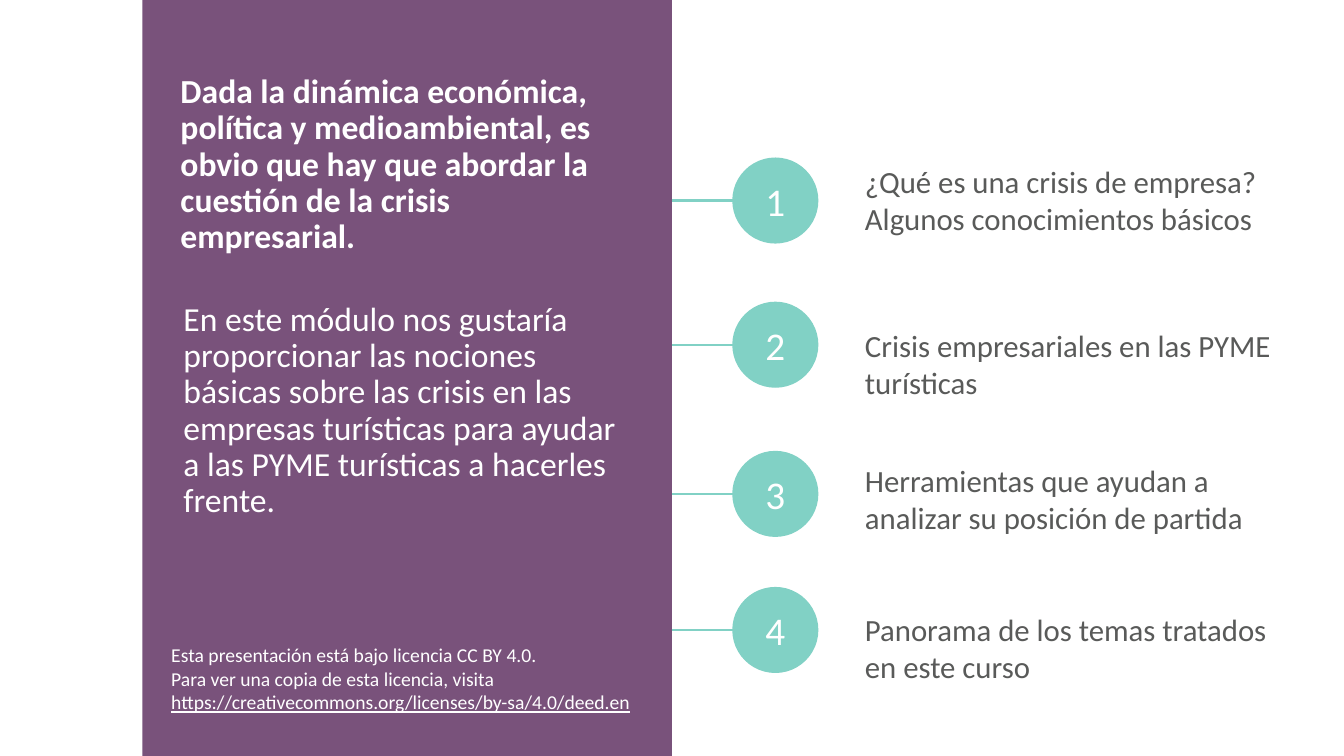
"""Build the module overview slide with a panel and four numbered topics."""
from dataclasses import dataclass

from lxml import etree
from pptx import Presentation
from pptx import util as u
from pptx.dml.color import RGBColor
from pptx.enum import shapes, text
from pptx.oxml.ns import qn

HEADING = [["Dada la dinámica económica, política y medioambiental, es obvio que "
            "hay que abordar la cuestión de la crisis empresarial."]]
SUMMARY = [["En este módulo nos gustaría proporcionar las nociones básicas sobre las "
            "crisis en las empresas turísticas para ayudar a las PYME turísticas a "
            "hacerles frente."]]
LICENCE = [["Esta presentación está bajo licencia CC BY 4.0."],
           ["Para ver una copia de esta licencia, visita ",
            "https://creativecommons.org/licenses/by-sa/4.0/deed.en"]]
TOPICS = [
    (20.93, 20.93, [["¿Qué es una crisis de empresa?"], ["Algunos conocimientos básicos"]]),
    (40, 42.53, [["Crisis empresariales en las PYME turísticas"]]),
    (59.73, 60.4, [["Herramientas que ayudan a analizar su posición de partida"]]),
    (77.73, 80.13, [["Panorama de los temas tratados en este curso"]]),
]

PANEL = (10.6, 0, 39.4, 100)
HEADING_AREA = (12.68, 9.2, 34.88, 26)
SUMMARY_AREA = (12.9, 39.33, 34.28, 40)
LICENCE_AREA = (12, 84.4, 38.18, 10.8)
BADGE_LEFT, BADGE_HEIGHT = 54.54, 11.2
TOPIC_LEFT, TOPIC_WIDTH, TOPIC_HEIGHT = 63.62, 32.63, 11.2


@dataclass(frozen=True)
class Theme:
    font: str = "Calibri"
    purple: str = "79527B"
    mint: str = "81D1C5"
    white: str = "FFFFFF"
    grey: str = "595A59"
    lead: int = 24
    topic: int = 22
    number: int = 28
    small: int = 14
    outline: float = 1
    link: float = 1.5


THEME = Theme()
deck = Presentation()
deck.slide_width, deck.slide_height = u.Inches(13.33), u.Inches(7.5)
page = deck.slides.add_slide(deck.slide_layouts[1])


def across(share):
    return round(deck.slide_width * share / 100)


def down(share):
    return round(deck.slide_height * share / 100)


def area(left, top, width, height):
    return across(left), down(top), across(width), down(height)


def write(box, lines, size, color, bold=False, spacing=1.0,
          align=text.PP_ALIGN.LEFT, anchor=text.MSO_ANCHOR.TOP):
    frame = box.text_frame
    frame.word_wrap = True
    frame.auto_size = text.MSO_AUTO_SIZE.NONE
    frame.vertical_anchor = anchor
    for index, runs in enumerate(lines):
        para = frame.add_paragraph() if index else frame.paragraphs[0]
        para.alignment, para.line_spacing = align, spacing
        para.space_before = u.Pt(0)
        for words in runs:
            span = para.add_run()
            span.text = words
            span.font.name, span.font.size = THEME.font, u.Pt(size)
            span.font.bold = bold
            span.font.underline = words.startswith("https:")
            span.font.color.rgb = RGBColor.from_string(color)


def fill_placeholder(box, place, lines, bold=False):
    box.left, box.top, box.width, box.height = area(*place)
    write(box, lines, THEME.lead, THEME.white, bold, spacing=0.9)
    for para in box.text_frame.paragraphs:
        settings = para._p.get_or_add_pPr()
        settings.set("marL", "0")
        settings.set("indent", "0")
        etree.SubElement(settings, qn("a:buNone"))


def add_text(place, lines, size, color):
    write(page.shapes.add_textbox(*area(*place)), lines, size, color)


def add_solid(kind, place, color):
    solid = page.shapes.add_shape(kind, *place)
    solid.shadow.inherit = False
    solid.fill.solid()
    solid.fill.fore_color.rgb = RGBColor.from_string(color)
    solid.line.color.rgb = RGBColor.from_string(color)
    solid.line.width = u.Pt(THEME.outline)
    return solid


def add_link(start, end, level):
    link = page.shapes.add_connector(shapes.MSO_CONNECTOR.STRAIGHT, start, level, end, level)
    link.line.color.rgb = RGBColor.from_string(THEME.mint)
    link.line.width = u.Pt(THEME.link)
    etree.SubElement(link.element.spPr, qn("a:effectLst"))


title, body = page.placeholders
panel = add_solid(shapes.MSO_SHAPE.RECTANGLE, area(*PANEL), THEME.purple)
panel.line.fill.background()
title.element.addprevious(panel.element)
fill_placeholder(title, HEADING_AREA, HEADING, bold=True)
fill_placeholder(body, SUMMARY_AREA, SUMMARY)

panel_edge = across(PANEL[0] + PANEL[2])
badge_left, badge_size = across(BADGE_LEFT), down(BADGE_HEIGHT)
for number, (badge_top, topic_top, lines) in enumerate(TOPICS, 1):
    add_link(panel_edge, badge_left, down(badge_top + BADGE_HEIGHT / 2))
    badge = add_solid(shapes.MSO_SHAPE.OVAL,
                      (badge_left, down(badge_top), badge_size, badge_size), THEME.mint)
    write(badge, [[str(number)]], THEME.number, THEME.white,
          align=text.PP_ALIGN.CENTER, anchor=text.MSO_ANCHOR.MIDDLE)
    add_text((TOPIC_LEFT, topic_top, TOPIC_WIDTH, TOPIC_HEIGHT), lines, THEME.topic, THEME.grey)

add_text(LICENCE_AREA, LICENCE, THEME.small, THEME.white)
deck.save("out.pptx")
